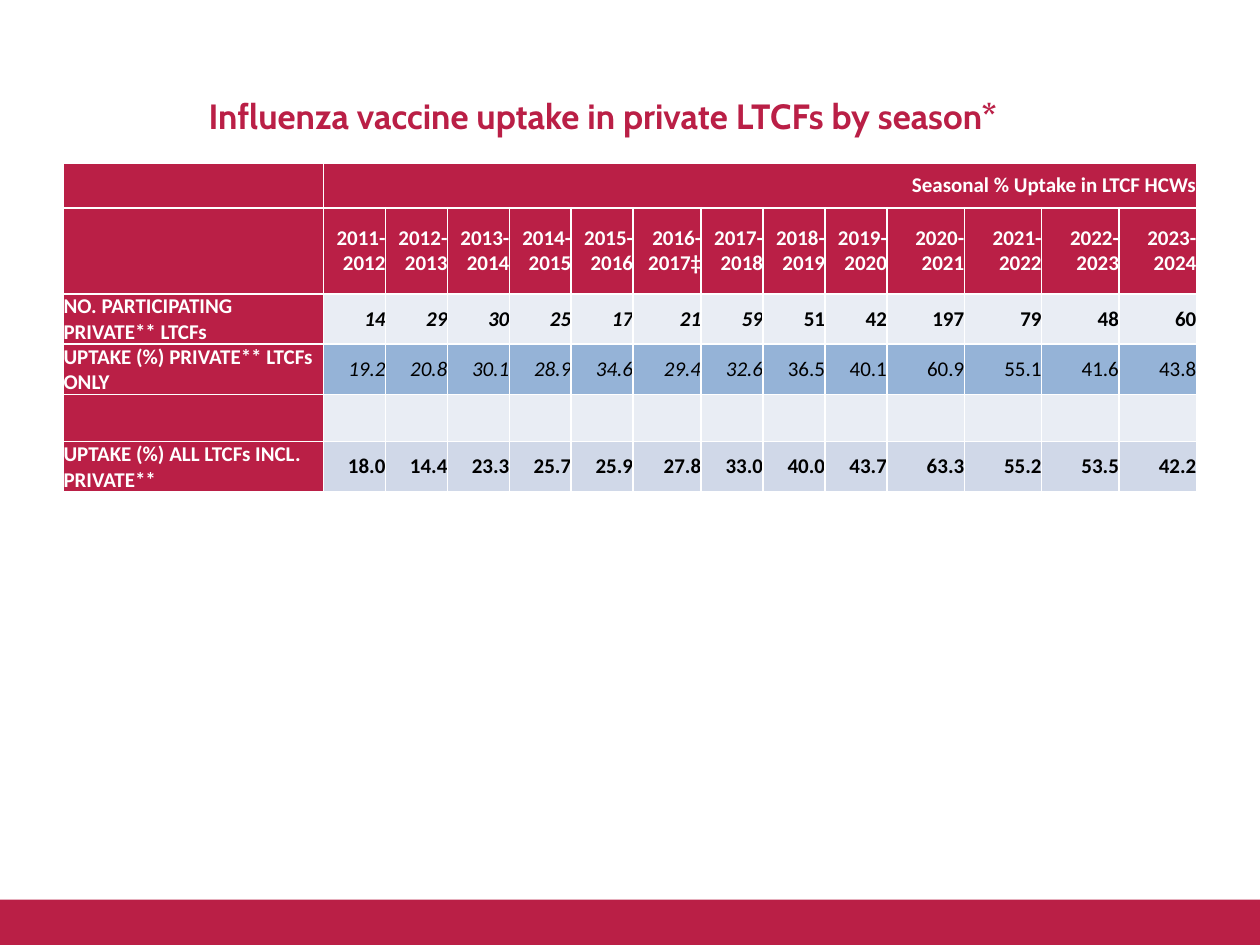
import lxml.etree
import pptx
import pptx.dml.color
import pptx.enum.shapes
import pptx.enum.text
import pptx.oxml.ns
import pptx.util

Pt = pptx.util.Pt
RGB = pptx.dml.color.RGBColor
ALIGN = pptx.enum.text.PP_ALIGN
MIDDLE = pptx.enum.text.MSO_ANCHOR.MIDDLE

CRIMSON = RGB(0xBA, 0x1F, 0x46)
WHITE = RGB(0xFF, 0xFF, 0xFF)
BLACK = RGB(0, 0, 0)
PALE = RGB(0xE9, 0xED, 0xF4)
BLUE = RGB(0x95, 0xB3, 0xD7)
GREY_BLUE = RGB(0xD0, 0xD8, 0xE8)

HEADING = "Influenza vaccine uptake in private LTCFs by season*"
SPANNING_HEADER = "Seasonal % Uptake in LTCF HCWs"
SEASONS = ["2011-2012", "2012-2013", "2013-2014", "2014-2015", "2015-2016",
           "2016-2017‡", "2017-2018", "2018-2019", "2019-2020", "2020-2021",
           "2021-2022", "2022-2023", "2023-2024"]
BLANKS = [""] * len(SEASONS)
UPTAKE_ROWS = [
    {"label": "", "values": [SPANNING_HEADER] + BLANKS[1:], "height": 25.7,
     "fill": CRIMSON, "color": WHITE, "bold": True, "italics": 0},
    {"label": "", "values": SEASONS, "height": 49,
     "fill": CRIMSON, "color": WHITE, "bold": True, "italics": 0},
    {"label": "NO. PARTICIPATING PRIVATE** LTCFs",
     "values": ["14", "29", "30", "25", "17", "21", "59", "51", "42", "197",
                "79", "48", "60"],
     "height": 26, "fill": PALE, "color": BLACK, "bold": True, "italics": 7},
    {"label": "UPTAKE (%) PRIVATE** LTCFs ONLY",
     "values": ["19.2", "20.8", "30.1", "28.9", "34.6", "29.4", "32.6", "36.5",
                "40.1", "60.9", "55.1", "41.6", "43.8"],
     "height": 26, "fill": BLUE, "color": BLACK, "bold": False, "italics": 7},
    {"label": "", "values": BLANKS, "height": 26.8,
     "fill": PALE, "color": BLACK, "bold": False, "italics": 0},
    {"label": "UPTAKE (%) ALL LTCFs INCL. PRIVATE**",
     "values": ["18.0", "14.4", "23.3", "25.7", "25.9", "27.8", "33.0", "40.0",
                "43.7", "63.3", "55.2", "53.5", "42.2"],
     "height": 26, "fill": GREY_BLUE, "color": BLACK, "bold": True, "italics": 0},
]
COLUMN_WIDTHS = [148.6] + [35.4] * 5 + [38.9] + [35.4] * 3 + [44.2] * 4
NO_MARGINS = {"margin_left": 0, "margin_right": 0, "margin_top": 0,
              "margin_bottom": 0, "vertical_anchor": MIDDLE}


def apply(target, values):
    for name, value in values.items():
        setattr(target, name, value)


def write(paragraph, text, align, color, **font):
    paragraph.alignment = align
    run = paragraph.add_run()
    run.text = text
    apply(run.font, font)
    run.font.color.rgb = color


def draw_borders(cell, widths):
    properties = cell._tc.get_or_add_tcPr()
    for index, (side, width) in enumerate(widths.items()):
        border = lxml.etree.Element(pptx.oxml.ns.qn(f"a:ln{side}"), w=str(Pt(width)))
        fill = lxml.etree.SubElement(border, pptx.oxml.ns.qn("a:solidFill"))
        lxml.etree.SubElement(fill, pptx.oxml.ns.qn("a:srgbClr"), val=str(WHITE))
        properties.insert(index, border)


def add_heading(slide):
    heading = slide.shapes.add_textbox(Pt(59.8), Pt(26.6), Pt(569.5), Pt(78.5))
    apply(heading.text_frame, {"word_wrap": True, "vertical_anchor": MIDDLE})
    write(heading.text_frame.paragraphs[0], HEADING, ALIGN.CENTER, CRIMSON,
          name="Cabin", size=Pt(20), bold=True)


def add_footer_band(slide):
    band = slide.shapes.add_shape(pptx.enum.shapes.MSO_SHAPE.RECTANGLE,
                                  0, Pt(514), Pt(720), Pt(26))
    band.shadow.inherit = False
    band.fill.solid()
    band.fill.fore_color.rgb = CRIMSON
    band.line.fill.background()


def add_uptake_table(slide):
    uptake = slide.shapes.add_table(
        len(UPTAKE_ROWS), len(COLUMN_WIDTHS), Pt(36.3), Pt(93.2),
        Pt(sum(COLUMN_WIDTHS)), Pt(sum(row["height"] for row in UPTAKE_ROWS))).table
    for column, width in zip(uptake.columns, COLUMN_WIDTHS):
        column.width = Pt(width)
    for r, row in enumerate(UPTAKE_ROWS):
        uptake.rows[r].height = Pt(row["height"])
        for c, text in enumerate([row["label"]] + row["values"]):
            cell = uptake.cell(r, c)
            is_label = c == 0
            apply(cell, NO_MARGINS)
            cell.fill.solid()
            cell.fill.fore_color.rgb = CRIMSON if is_label else row["fill"]
            draw_borders(cell, {"L": 1, "R": 1, "T": 1.5 if r == 1 else 1,
                                "B": 1.5 if r == 0 else 1})
            if text:
                write(cell.text_frame.paragraphs[0], text,
                      ALIGN.LEFT if is_label else ALIGN.RIGHT,
                      WHITE if is_label else row["color"],
                      name="Calibri", size=Pt(12), bold=is_label or row["bold"],
                      italic=1 <= c <= row["italics"])
    uptake.cell(0, 1).merge(uptake.cell(0, len(SEASONS)))


def main():
    deck = pptx.Presentation()
    apply(deck, {"slide_width": Pt(720), "slide_height": Pt(540)})
    slide = deck.slides.add_slide(deck.slide_layouts[6])
    add_heading(slide)
    add_footer_band(slide)
    add_uptake_table(slide)
    deck.save("out.pptx")


if __name__ == "__main__":
    main()
